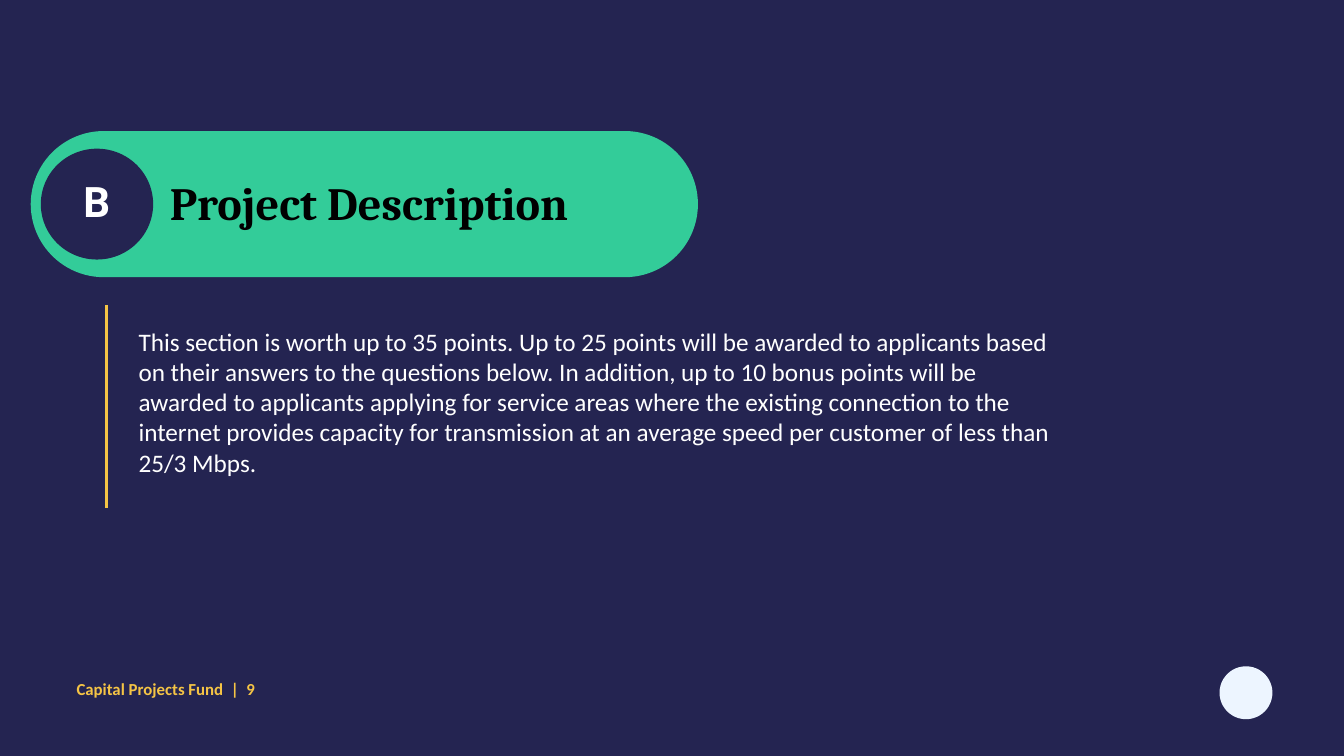
from dataclasses import dataclass

from lxml.etree import SubElement
from pptx import Presentation
from pptx.dml.color import RGBColor
from pptx.enum.shapes import MSO_CONNECTOR, MSO_SHAPE
from pptx.enum.text import MSO_ANCHOR, PP_ALIGN
from pptx.oxml.ns import qn
from pptx.util import Inches, Pt


@dataclass(frozen=True)
class Theme:
    """Colours, fonts and type sizes of the deck."""
    navy: str = "242451"
    green: str = "33CC99"
    gold: str = "F5C445"
    pale: str = "EDF5FF"
    white: str = "FFFFFF"
    black: str = "000000"
    heading: str = "Cambria"
    body: str = "Calibri"
    badge: str = "Roboto"
    title_size: int = 66
    badge_size: int = 60
    body_size: int = 36
    footer_size: int = 24
    rule_width: float = 4.5


THEME = Theme()


def place(sp, left, top, width, height):
    """Set the box of a shape in inches."""
    box = {"left": left, "top": top, "width": width, "height": height}
    for name, value in box.items():
        setattr(sp, name, Inches(value))


def write(sp, text, size, font, color, bold=False, align=PP_ALIGN.LEFT,
          top_inset=0.05, spacing=1.0):
    """Fill a shape with one formatted paragraph."""
    tf = sp.text_frame
    frame = {"word_wrap": True, "vertical_anchor": MSO_ANCHOR.TOP,
             "margin_left": Inches(0.1), "margin_right": Inches(0.1),
             "margin_top": Inches(top_inset), "margin_bottom": Inches(0.05)}
    for name, value in frame.items():
        setattr(tf, name, value)
    p = tf.paragraphs[0]
    paragraph = {"alignment": align, "line_spacing": spacing, "space_before": Pt(0)}
    for name, value in paragraph.items():
        setattr(p, name, value)
    r = p.add_run()
    r.text = text
    for name, value in {"size": Pt(size), "name": font, "bold": bold}.items():
        setattr(r.font, name, value)
    r.font.color.rgb = RGBColor.from_string(color)


def add_text(s, box, *args, **formats):
    """Add a text box with one paragraph."""
    sp = s.shapes.add_textbox(*map(Inches, box))
    write(sp, *args, **formats)


def add_filled(s, kind, box, color):
    """Add a plain filled shape without outline."""
    sp = s.shapes.add_shape(kind, *map(Inches, box))
    sp.shadow.inherit = False
    sp.fill.solid()
    sp.fill.fore_color.rgb = RGBColor.from_string(color)
    sp.line.fill.background()
    return sp


def add_banner(s, left, top, width, height, letter, title):
    """Place the rounded banner with its letter badge and the slide title."""
    pill = add_filled(s, MSO_SHAPE.ROUNDED_RECTANGLE, (left, top, width, height), THEME.green)
    pill.adjustments[0] = 0.5
    add_filled(s, MSO_SHAPE.OVAL, (left + 0.2, top + 0.35, 2.23, 2.2), THEME.navy)
    heading = s.shapes.title
    s.shapes._spTree.append(heading._element)
    place(heading, left + 2.66, top + 0.72, 11.2, 1.52)
    write(heading, title, THEME.title_size, THEME.heading, THEME.black,
          bold=True, top_inset=0.14)
    add_text(s, (left + 0.08, top + 0.89, 2.46, 1.16), letter, THEME.badge_size,
             THEME.badge, THEME.white, bold=True, align=PP_ALIGN.CENTER, top_inset=0)


def add_description(s, left, top, width, height, text):
    """Place the paragraph and the vertical rule at its left."""
    add_text(s, (left + 0.53, top + 0.37, width - 0.53, height - 0.37), text,
             THEME.body_size, THEME.body, THEME.white)
    rule = s.shapes.add_connector(MSO_CONNECTOR.STRAIGHT, Inches(left), Inches(top),
                                  Inches(left), Inches(top + 4.03))
    rule.line.color.rgb = RGBColor.from_string(THEME.gold)
    rule.line.width = Pt(THEME.rule_width)
    SubElement(rule._element.spPr, qn("a:effectLst"))


def add_footer(s, left, top, width, text):
    """Place the footer line and the dot at its right end."""
    dot = 1.05
    add_filled(s, MSO_SHAPE.OVAL, (left + width - dot, top, dot, dot), THEME.pale)
    add_text(s, (left, top + 0.24, 19.18, 0.48), text, THEME.footer_size,
             THEME.body, THEME.gold, bold=True, spacing=0.9)


def main():
    """Build and save the section slide."""
    prs = Presentation()
    prs.slide_width, prs.slide_height = Inches(26.67), Inches(15)
    s = prs.slides.add_slide(prs.slide_layouts[5])
    s.background.fill.solid()
    s.background.fill.fore_color.rgb = RGBColor.from_string(THEME.navy)
    add_footer(s, 1.42, 13.22, 23.83, "Capital Projects Fund  |  9")
    add_banner(s, 0.61, 2.6, 13.24, 2.9, "B", "Project Description")
    add_description(
        s, 2.12, 6.05, 18.92, 7.25,
        "This section is worth up to 35 points. Up to 25 points will be awarded to "
        "applicants based on their answers to the questions below. In addition, up to "
        "10 bonus points will be awarded to applicants applying for service areas where "
        "the existing connection to the internet provides capacity for transmission at "
        "an average speed per customer of less than 25/3 Mbps.")
    prs.save("out.pptx")


if __name__ == "__main__":
    main()
